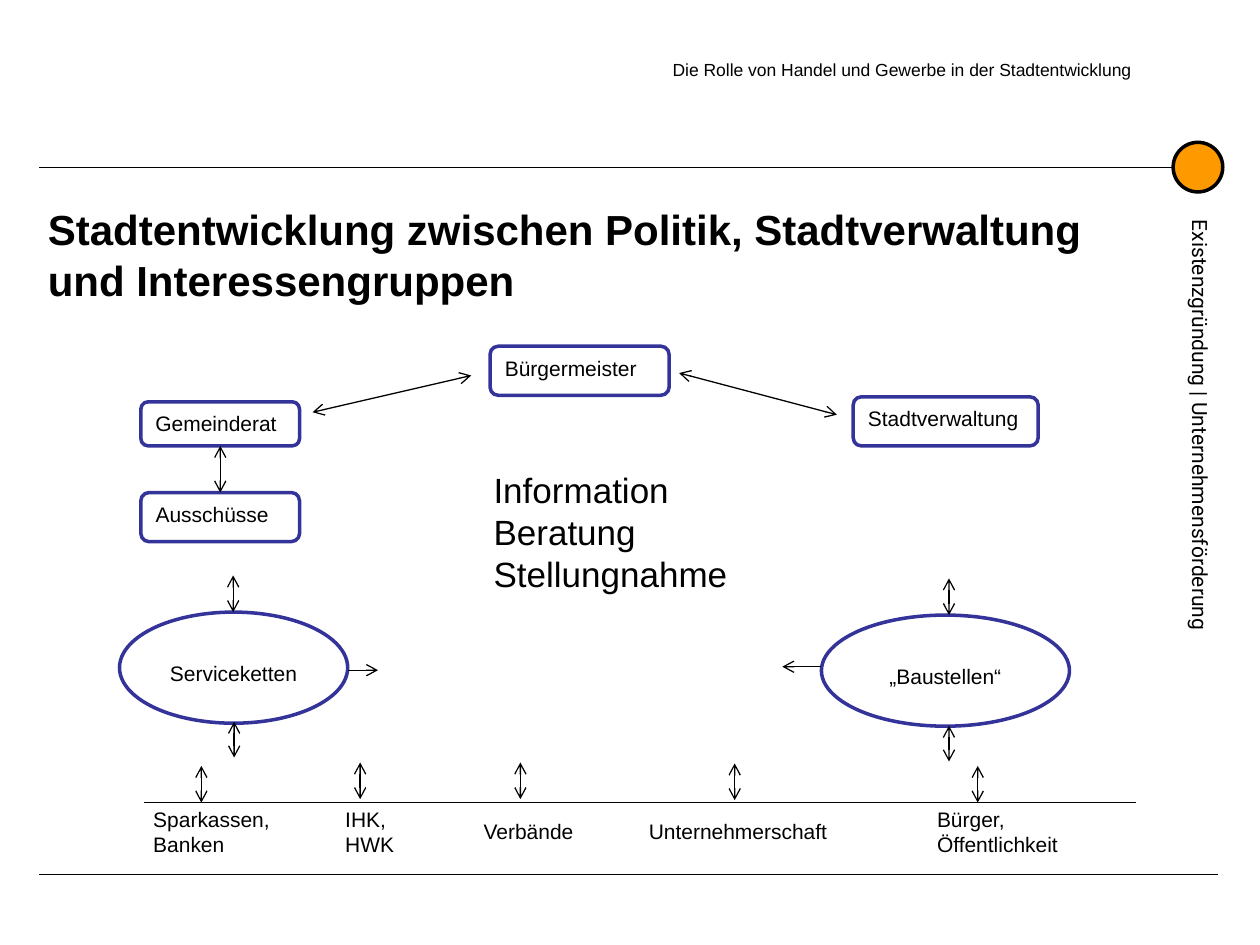
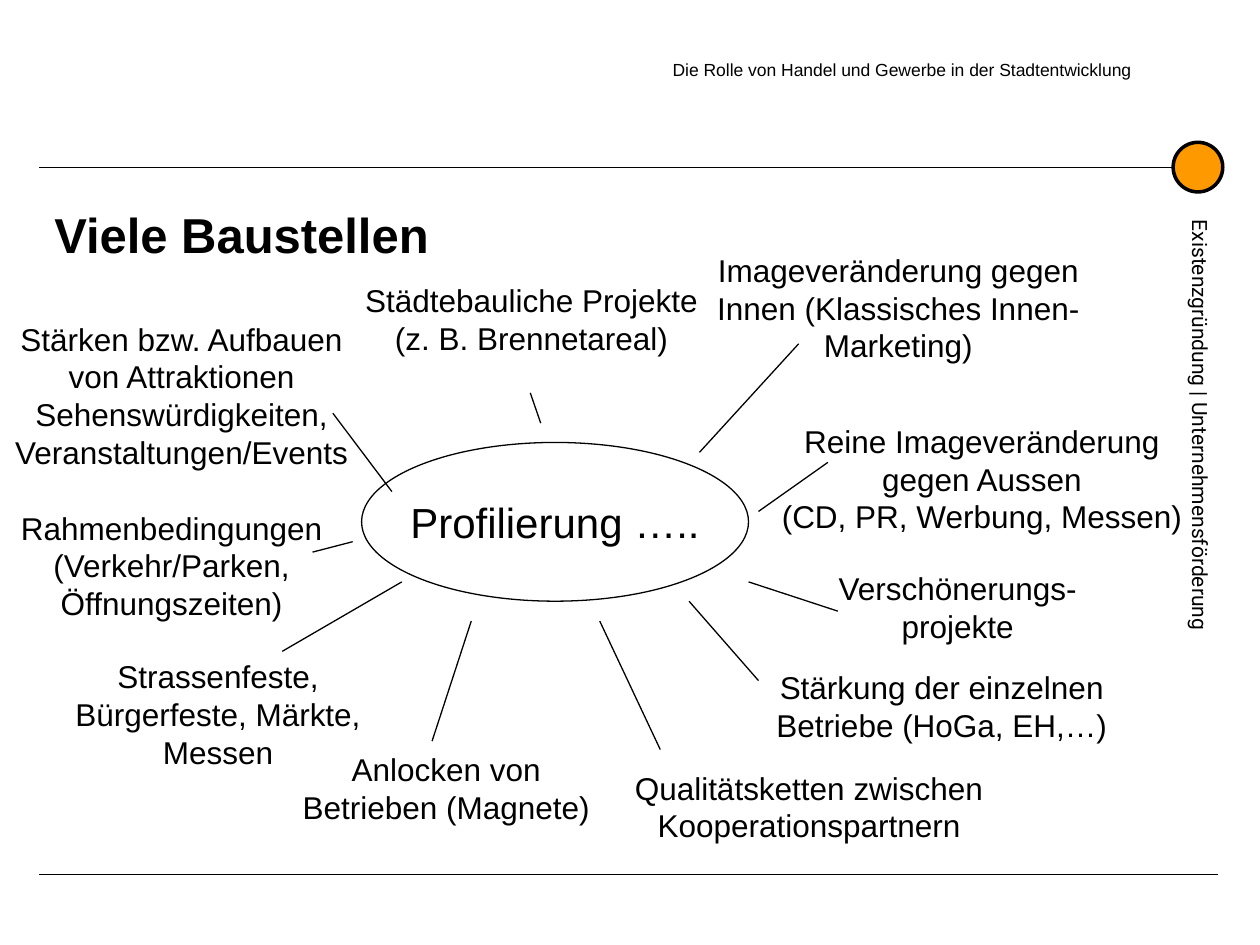
from dataclasses import dataclass

from lxml import etree
from pptx import Presentation
from pptx.dml.color import RGBColor
from pptx.enum.shapes import MSO_CONNECTOR, MSO_SHAPE
from pptx.enum.text import MSO_ANCHOR, MSO_AUTO_SIZE, PP_ALIGN
from pptx.oxml.ns import qn
from pptx.util import Cm, Pt

STRAIGHT = MSO_CONNECTOR.STRAIGHT
ELLIPSE = MSO_SHAPE.OVAL
ROUNDED = MSO_SHAPE.ROUNDED_RECTANGLE
LEFT, CENTER = PP_ALIGN.LEFT, PP_ALIGN.CENTER
TOP, MIDDLE = MSO_ANCHOR.TOP, MSO_ANCHOR.MIDDLE
FIT_SHAPE, NO_FIT = MSO_AUTO_SIZE.SHAPE_TO_FIT_TEXT, MSO_AUTO_SIZE.NONE

COLORS = {"ink": "000000", "paper": "FFFFFF", "accent": "FF9900", "frame": "333399"}
FONT, SIDE_FONT = "Arial", "Roboto"
TITLE_ONLY = 5
BOTTOM, UPPER = 2, 0  # connection sites of a rectangle


@dataclass(frozen=True)
class Label:
    """Text box whose height follows from its lines; lengths in cm."""
    text: str
    left: float
    top: float
    width: float
    size: int = 12
    align: int = LEFT
    font: str = FONT
    rotation: int = 0
    wrapped_lines: int = 0

    @property
    def height(self) -> float:
        lines = self.wrapped_lines or len(self.text.split("\n"))
        return round(lines * self.size * 0.0423 + 0.26, 2)


@dataclass(frozen=True)
class Node:
    """Outlined preset shape with text; lengths in cm."""
    text: str
    left: float
    top: float
    width: float
    height: float
    kind: int = ROUNDED
    size: int = 12
    align: int = LEFT
    anchor: int = TOP
    fill: str | None = "paper"
    line: str = "frame"
    weight: float = 2
    lowered: float = 0


@dataclass(frozen=True)
class Line:
    """Straight line, with optional arrowheads; lengths in cm."""
    x1: float
    y1: float
    x2: float
    y2: float
    head: bool = False
    tail: bool = False
    weight: float = 0.75


@dataclass(frozen=True)
class Topic:
    label: Label
    spoke: Line


def rgb(name: str) -> RGBColor:
    return RGBColor.from_string(COLORS[name])


def write_text(frame, text: str, size: int, align=LEFT, font=FONT, bold=False) -> None:
    frame.text = text
    font_format = {"name": font, "size": Pt(size), "bold": bold}
    for paragraph in frame.paragraphs:
        paragraph.alignment = align
        paragraph.space_before = Pt(0)
        for run in paragraph.runs:
            run.font.color.rgb = rgb("ink")
            for name, value in font_format.items():
                setattr(run.font, name, value)


def add_label(slide, label: Label) -> None:
    shape = slide.shapes.add_textbox(
        Cm(label.left), Cm(label.top), Cm(label.width), Cm(label.height))
    shape.rotation = label.rotation
    shape.text_frame.word_wrap = True
    shape.text_frame.auto_size = FIT_SHAPE
    write_text(shape.text_frame, label.text, label.size, label.align, label.font)


def add_node(slide, node: Node):
    shape = slide.shapes.add_shape(
        node.kind, Cm(node.left), Cm(node.top), Cm(node.width), Cm(node.height))
    shape.shadow.inherit = False
    if node.fill:
        shape.fill.solid()
        shape.fill.fore_color.rgb = rgb(node.fill)
    else:
        shape.fill.background()
    shape.line.color.rgb = rgb(node.line)
    shape.line.width = Pt(node.weight)
    if node.text:
        frame_format = {
            "word_wrap": node.fill is not None,
            "vertical_anchor": node.anchor,
            "margin_top": Cm(0.13 + node.lowered),
        }
        for name, value in frame_format.items():
            setattr(shape.text_frame, name, value)
        write_text(shape.text_frame, node.text, node.size, node.align)
    return shape


def add_line(slide, line: Line):
    connector = slide.shapes.add_connector(
        STRAIGHT, Cm(line.x1), Cm(line.y1), Cm(line.x2), Cm(line.y2))
    connector.line.color.rgb = rgb("ink")
    connector.line.width = Pt(line.weight)
    outline = connector.get_or_add_ln()
    for tag, wanted in (("a:headEnd", line.head), ("a:tailEnd", line.tail)):
        if wanted:
            etree.SubElement(outline, qn(tag), type="arrow")
    etree.SubElement(connector.element.spPr, qn("a:effectLst"))
    return connector


def double_arrow(x: float, y: float, length: float = 0.74) -> Line:
    return Line(x, y, x, y + length, head=True, tail=True)


# Parts shared by all slides
FRAME_LINES = [Line(0.79, y, 24.56, y, weight=0.5) for y in (3.38, 17.63)]
FRAME_DOT = Node("", 23.65, 2.87, 1, 1, ELLIPSE, fill="accent", line="ink")
FRAME_LABELS = [
    Label("Existenzgründung | Unternehmensförderung", 18.52, 9.47, 11.35,
          font=SIDE_FONT, rotation=90),
    Label("Die Rolle von Handel und Gewerbe in der Stadtentwicklung",
          13.31, 1.07, 11.4, size=10),
]


def add_framed_slide(presentation, title: str, left: float, top: float, size: int):
    slide = presentation.slides.add_slide(presentation.slide_layouts[TITLE_ONLY])
    for line in FRAME_LINES:
        add_line(slide, line)
    add_node(slide, FRAME_DOT)
    for label in FRAME_LABELS:
        add_label(slide, label)
    heading = slide.shapes.title
    place = {"left": left, "top": top, "width": 21.59, "height": 3.18}
    for name, value in place.items():
        setattr(heading, name, Cm(value))
    heading.text_frame.auto_size = NO_FIT
    heading.text_frame.vertical_anchor = MIDDLE
    write_text(heading.text_frame, title, size, bold=True)
    return slide


# Slide 1: network of politics, administration and interest groups
COUNCIL = Node("Gemeinderat", 2.84, 8.1, 3.2, 0.89)
COMMITTEES = Node("Ausschüsse", 2.84, 9.93, 3.2, 0.99)
OTHER_ACTORS = [
    Node("Bürgermeister", 9.88, 6.98, 3.61, 0.99),
    Node("Stadtverwaltung", 17.2, 8, 3.73, 0.99),
    Node("Serviceketten", 2.41, 12.34, 4.6, 2.24, ELLIPSE,
         align=CENTER, anchor=MIDDLE, lowered=0.2),
    Node("„Baustellen“", 16.56, 12.4, 5, 2.24, ELLIPSE,
         align=CENTER, anchor=MIDDLE, lowered=0.2),
]
ACTOR_ARROWS = [
    Line(13.69, 7.52, 16.87, 8.36, head=True, tail=True),
    Line(6.3, 8.31, 9.5, 7.57, head=True, tail=True),
    double_arrow(4.7, 11.6),
    double_arrow(4.72, 14.55, 0.72),
    Line(7.01, 13.51, 7.62, 13.51, tail=True),
    double_arrow(19.13, 11.66),
    double_arrow(19.13, 14.63, 0.72),
    Line(16.56, 13.44, 15.77, 13.44, tail=True),
]
GROUP_AXIS = Line(2.9, 16.18, 22.91, 16.18)
GROUP_ARROWS = [
    double_arrow(x, y) for x, y in
    ((4.06, 15.44), (7.26, 15.37), (10.49, 15.37), (14.81, 15.39), (19.71, 15.44))
]
NETWORK_LABELS = [
    Label("Information\nBeratung\nStellungnahme", 9.7, 9.32, 6.4, size=20),
    Label("Sparkassen,\nBanken", 2.84, 16.13, 4.39),
    Label("IHK,\nHWK", 6.71, 16.13, 5.21),
    Label("Verbände", 9.5, 16.38, 3.99),
    Label("Unternehmerschaft", 12.83, 16.38, 4.39),
    Label("Bürger,\nÖffentlichkeit", 18.64, 16.13, 4.6),
]


def build_network(presentation) -> None:
    slide = add_framed_slide(
        presentation,
        "Stadtentwicklung zwischen Politik, Stadtverwaltung und Interessengruppen",
        0.71, 3.53, 24)
    council, committees = add_node(slide, COUNCIL), add_node(slide, COMMITTEES)
    for node in OTHER_ACTORS:
        add_node(slide, node)
    link = add_line(slide, double_arrow(4.44, 8.99, 0.94))
    link.begin_connect(council, BOTTOM)
    link.end_connect(committees, UPPER)
    for line in [GROUP_AXIS, *GROUP_ARROWS, *ACTOR_ARROWS]:
        add_line(slide, line)
    for label in NETWORK_LABELS:
        add_label(slide, label)


# Slide 2: topics around the profile
PROFILE = Node("Profilierung …..", 7.29, 8.92, 7.8, 3.2, ELLIPSE, size=24,
               align=CENTER, anchor=MIDDLE, fill=None, line="ink", weight=0.75)


def topic(text: str, left: float, top: float, width: float, spoke: Line,
          wrapped_lines: int = 0) -> Topic:
    label = Label(text, left, top, width, 18, CENTER, wrapped_lines=wrapped_lines)
    return Topic(label, spoke)


TOPICS = [
    topic("Städtebauliche Projekte (z. B. Brennetareal)", 7.11, 5.54, 7.21,
          Line(10.69, 7.92, 10.9, 8.53), wrapped_lines=3),
    topic("Imageveränderung gegen\nInnen (Klassisches Innen-\nMarketing)",
          13.31, 4.93, 9.6, Line(16.1, 6.93, 14.1, 9.12)),
    topic("Reine Imageveränderung\ngegen Aussen\n(CD, PR, Werbung, Messen)",
          15.49, 8.38, 8.61, Line(16.69, 9.32, 15.29, 10.31)),
    topic("Verschönerungs-\nprojekte", 15.9, 11.35, 6.81,
          Line(15.09, 11.73, 16.89, 12.32)),
    topic("Stärkung der einzelnen\nBetriebe (HoGa, EH,…)", 15.29, 13.34, 7.39,
          Line(13.89, 12.12, 15.29, 13.72)),
    topic("Qualitätsketten zwischen\nKooperationspartnern", 11.51, 15.37, 9.6,
          Line(12.09, 12.52, 13.31, 15.11)),
    topic("Anlocken von\nBetrieben (Magnete)", 5.49, 14.99, 7.01,
          Line(9.5, 12.52, 8.71, 14.94)),
    topic("Strassenfeste,\nBürgerfeste, Märkte,\nMessen", 0.89, 13.13, 7.01,
          Line(8.1, 11.73, 5.69, 13.13)),
    topic("Rahmenbedingungen\n(Verkehr/Parken,\nÖffnungszeiten)", -0.2, 10.13, 7.32,
          Line(7.11, 10.92, 6.3, 11.13)),
    topic("Stärken bzw. Aufbauen\nvon Attraktionen\nSehenswürdigkeiten,\n"
          "Veranstaltungen/Events", 0, 6.32, 7.32, Line(6.71, 8.33, 7.9, 9.91)),
]


def build_topics(presentation) -> None:
    slide = add_framed_slide(presentation, "Viele Baustellen", 0.84, 3.12, 28)
    add_node(slide, PROFILE)
    for item in TOPICS:
        add_line(slide, item.spoke)
        add_label(slide, item.label)


def main() -> None:
    presentation = Presentation()
    presentation.slide_width, presentation.slide_height = Cm(25.4), Cm(19.05)
    build_network(presentation)
    build_topics(presentation)
    presentation.save("out.pptx")


if __name__ == "__main__":
    main()
